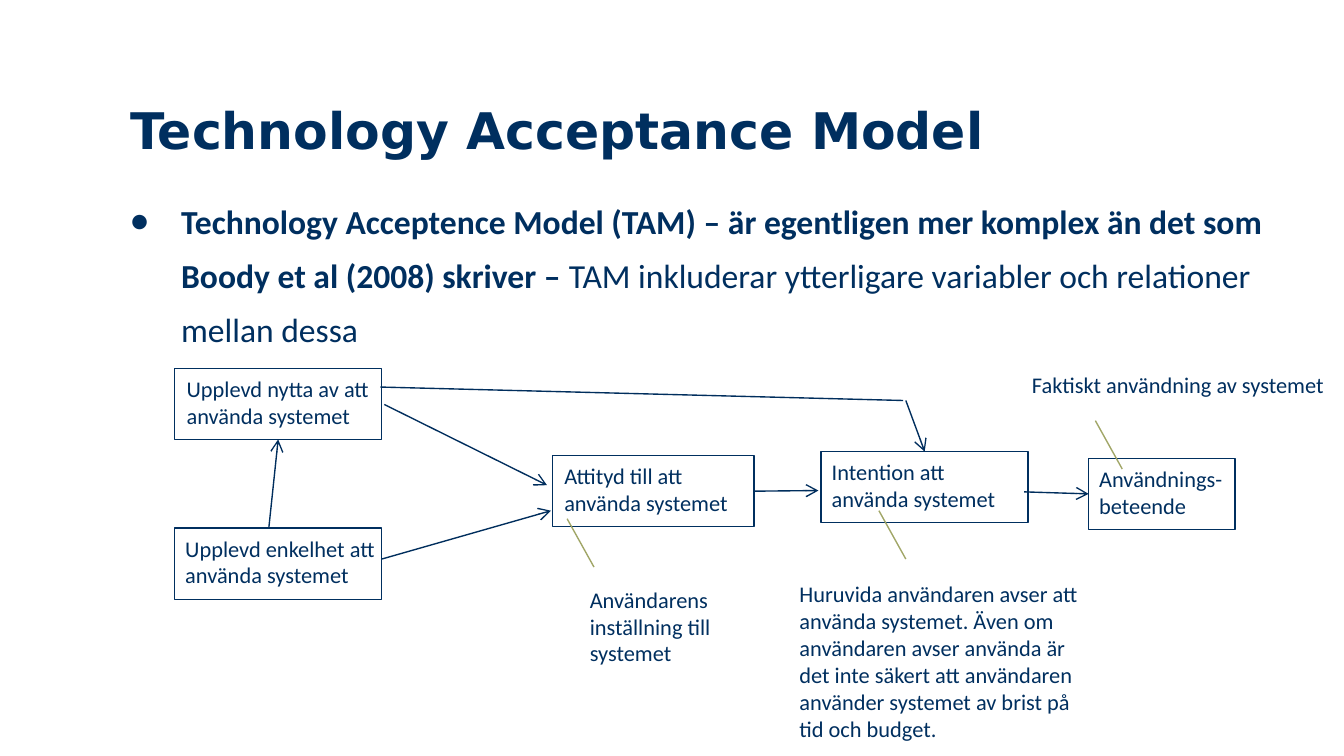
from lxml import etree
from pptx import Presentation
from pptx.dml.color import RGBColor
from pptx.enum.shapes import MSO_CONNECTOR as Link, MSO_SHAPE as Shape
from pptx.enum.text import MSO_AUTO_SIZE as Fit
from pptx.oxml.ns import qn
from pptx.util import Inches, Pt

NAVY = RGBColor(0x00, 0x2F, 0x5F)
BLUE = RGBColor(0x00, 0x2E, 0x5D)
OLIVE = RGBColor(0xA1, 0xA6, 0x67)
WHITE = RGBColor(0xFF, 0xFF, 0xFF)
TOP, LEFT, BOTTOM, RIGHT = range(4)
WIDTH = Inches(10)
BOX_H = 0.53


def add_text(slide, runs, x, y, w, h, size=12, font="Calibri", bullet=None,
             lead=None, after=0, grow=True):
    """Add a text box with one paragraph of (text, bold) runs."""
    box = slide.shapes.add_textbox(Inches(x), Inches(y), Inches(w), Inches(h))
    frame = box.text_frame
    frame.word_wrap = True
    frame.auto_size = Fit.SHAPE_TO_FIT_TEXT if grow else Fit.NONE
    para = frame.paragraphs[0]
    if bullet:
        add_bullet(para, bullet, font)
    if lead:
        para.line_spacing = Pt(lead)
    para.space_after = Pt(after)
    for text, bold in runs:
        run = para.add_run()
        run.text = text
        run.font.name = font
        run.font.size = Pt(size)
        run.font.bold = bold
        run.font.color.rgb = NAVY


def add_bullet(para, char, font):
    props = para._p.get_or_add_pPr()
    props.set("marL", str(Inches(0.38)))
    props.set("indent", str(-Inches(0.38)))
    etree.SubElement(props, qn("a:buSzPct")).set("val", "93000")
    etree.SubElement(props, qn("a:buFont")).set("typeface", font)
    etree.SubElement(props, qn("a:buChar")).set("char", char)


def add_node(slide, text, x, y, w, text_x, text_w):
    """Add a framed model variable; its label may be wider than the frame."""
    node = slide.shapes.add_shape(
        Shape.RECTANGLE, Inches(x), Inches(y), Inches(w), Inches(BOX_H))
    node.shadow.inherit = False
    node.fill.solid()
    node.fill.fore_color.rgb = WHITE
    node.line.color.rgb = NAVY
    node.line.width = Pt(0.75)
    add_text(slide, [(text, False)], text_x, y, text_w, 0.5)
    return node


def add_line(slide, start, end, color=BLUE, arrow=True, begin=None, finish=None):
    """Draw a line; begin and finish are (node, side) pairs to join."""
    line = slide.shapes.add_connector(
        Link.STRAIGHT, *(Inches(v) for v in (*start, *end)))
    line.line.color.rgb = color
    line.line.width = Pt(0.75)
    if arrow:
        tail = etree.SubElement(line.line._get_or_add_ln(), qn("a:tailEnd"))
        tail.set("type", "arrow")
    etree.SubElement(line._element.spPr, qn("a:effectLst"))
    if begin:
        line.begin_connect(*begin)
    if finish:
        line.end_connect(*finish)


def add_model(slide):
    gain = add_node(slide, "Upplevd nytta av att använda systemet",
                    1.3, 2.74, 1.54, 1.29, 1.77)
    add_node(slide, "Upplevd enkelhet att använda systemet",
             1.3, 3.93, 1.54, 1.28, 2.04)
    aim = add_node(slide, "Intention att använda systemet",
                   6.11, 3.36, 1.54, 6.09, 1.59)
    view = add_node(slide, "Attityd till att använda systemet",
                    4.11, 3.39, 1.5, 4.1, 1.59)
    use = add_node(slide, "Användnings-beteende",
                   8.1, 3.41, 1.09, 8.08, 1.12)

    add_line(slide, (2, 3.93), (2.07, 3.27), finish=(gain, BOTTOM))
    add_line(slide, (2.86, 3.01), (4.07, 3.61))
    add_line(slide, (2.84, 4.16), (4.1, 3.8))
    add_line(slide, (5.61, 3.65), (6.09, 3.65), begin=(view, RIGHT))
    add_line(slide, (7.62, 3.66), (8.1, 3.66), finish=(use, LEFT))
    add_line(slide, (2.83, 2.88), (6.72, 2.98), arrow=False)
    add_line(slide, (6.74, 2.98), (6.86, 3.36), finish=(aim, TOP))


def add_notes(slide):
    """Add the explanations and the short lines that lead to them."""
    notes = [
        ("Huruvida användaren avser att använda systemet. Även om användaren "
         "avser använda är det inte säkert att användaren använder systemet "
         "av brist på tid och budget.", 5.85, 4.27, 2.42, 1.31, 6.54, 3.8),
        ("Faktiskt användning av systemet", 7.58, 2.71, 2.42, 0.3, 8.15, 3.13),
        ("Användarens inställning till systemet",
         4.29, 4.31, 1.49, 0.71, 4.22, 3.86),
    ]
    for text, x, y, w, h, line_x, line_y in notes:
        add_text(slide, [(text, False)], x, y, w, h)
        add_line(slide, (line_x, line_y), (line_x + 0.2, line_y + 0.36),
                 color=OLIVE, arrow=False)


def main():
    deck = Presentation()
    deck.slide_width, deck.slide_height = WIDTH, WIDTH * 9 // 16
    slide = deck.slides.add_slide(deck.slide_layouts[6])
    add_text(slide, [("Technology Acceptance Model", True)],
             0.87, 0.69, 7.49, 0.65, size=27, font="DejaVu Sans", grow=False)
    add_text(slide, [
        ("Technology Acceptence Model (TAM) – är egentligen mer komplex än "
         "det som Boody et al (2008) skriver –", True),
        (" TAM inkluderar ytterligare variabler och relationer mellan dessa",
         False),
    ], 0.87, 1.34, 9.13, 3.5, size=18, bullet="●", lead=29, after=9, grow=False)
    add_model(slide)
    add_notes(slide)
    deck.save("out.pptx")


if __name__ == "__main__":
    main()
